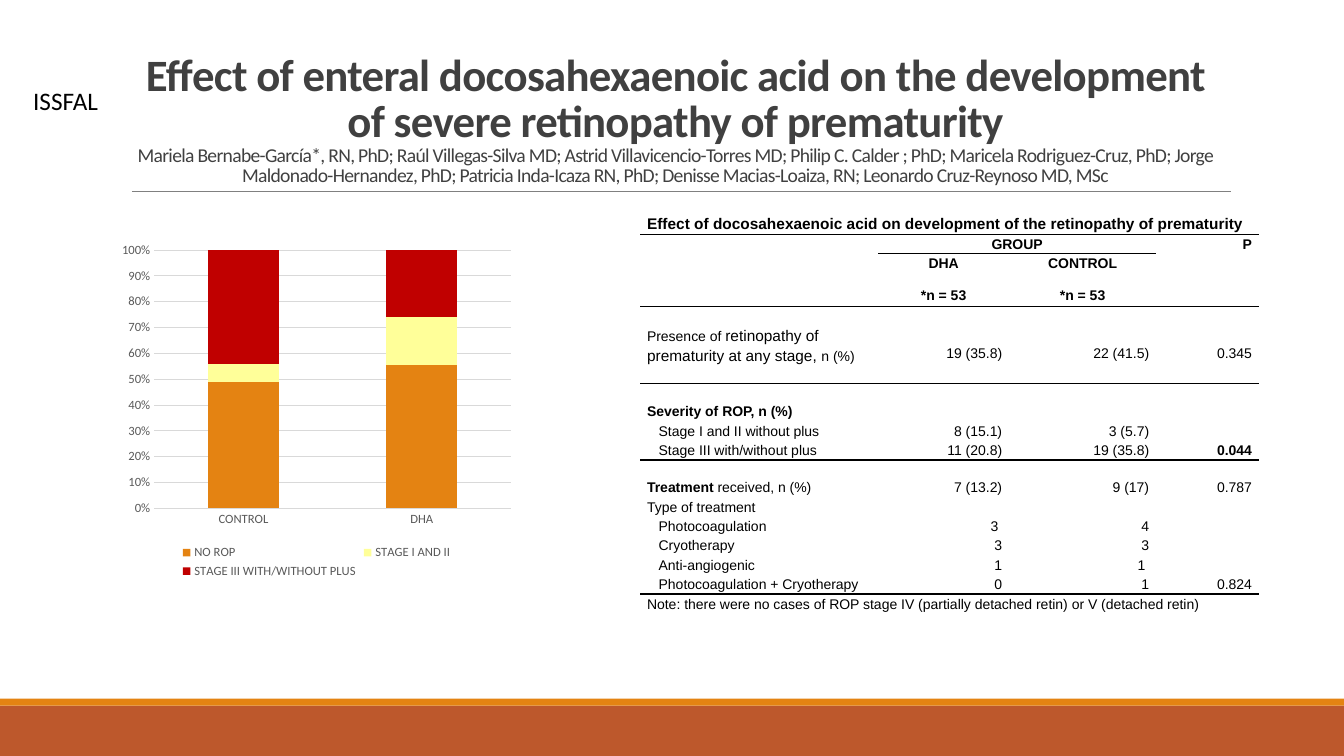
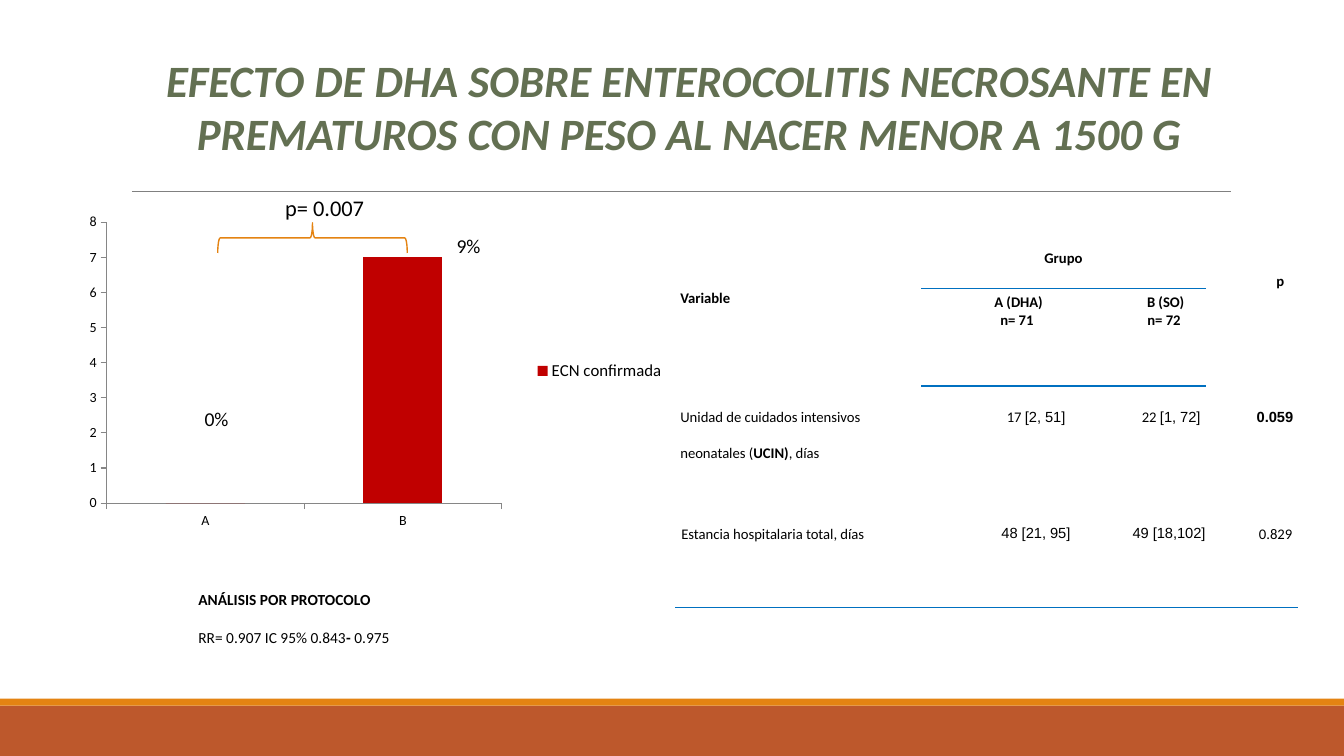
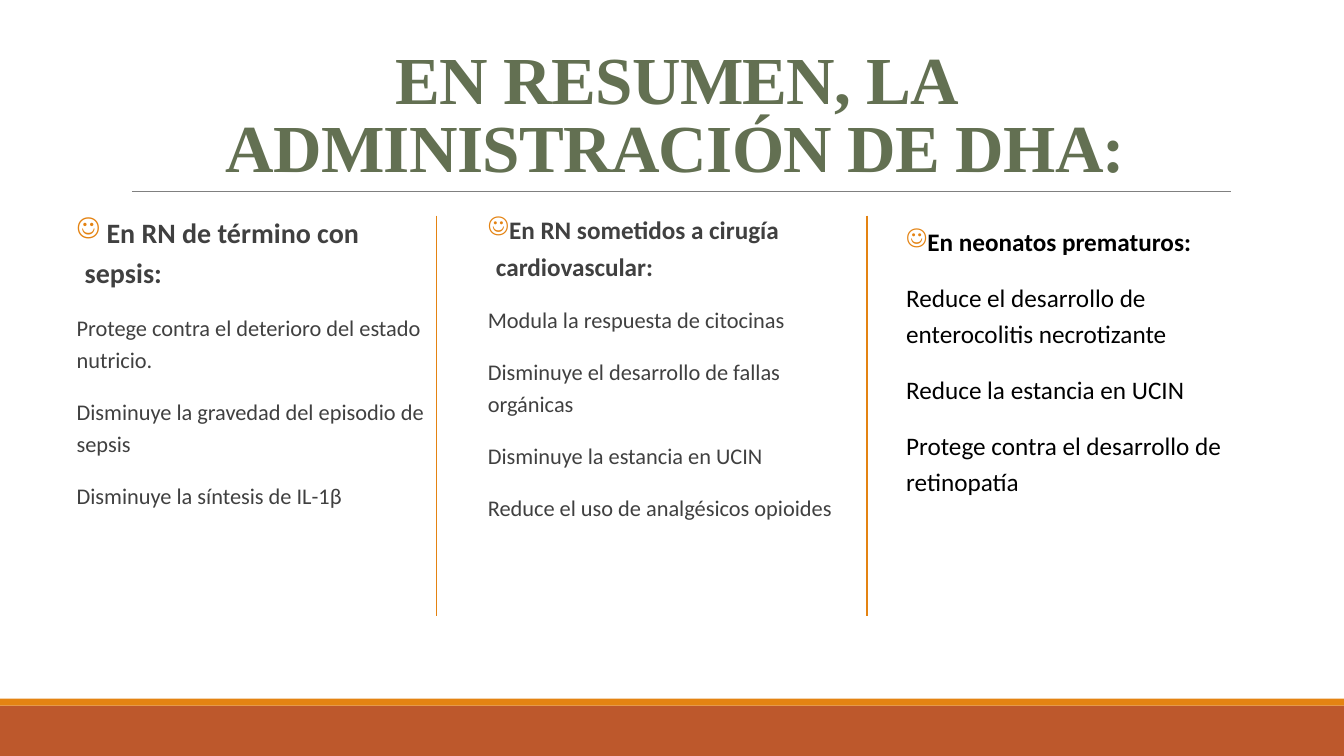
from lxml.etree import SubElement
from pptx import Presentation
from pptx.chart.data import CategoryChartData
from pptx.dml.color import RGBColor
from pptx.enum.chart import XL_CHART_TYPE, XL_LEGEND_POSITION, XL_TICK_MARK
from pptx.enum.shapes import MSO_CONNECTOR, MSO_SHAPE
from pptx.enum.text import MSO_ANCHOR, MSO_AUTO_SIZE, PP_ALIGN
from pptx.oxml import parse_xml
from pptx.oxml.ns import nsdecls, qn
from pptx.util import Pt

LEFT, CENTER, RIGHT = PP_ALIGN.LEFT, PP_ALIGN.CENTER, PP_ALIGN.RIGHT
BREAK = None
RUST, ORANGE, GREEN, RED = "BD582C", "E48312", "637052", "C00000"
BLACK, INK, GRAY, PALE, BLUE = "000000", "404040", "595959", "D9D9D9", "0070C0"
PLAIN_TABLE = "{2D5ABB26-0587-4C30-8999-92F81FD0307C}"
BOLD = {"bold": True}
ARIAL = {"font": "Arial"}

STUDY_TITLE = [
    "Effect of enteral docosahexaenoic acid on the development of severe retinopathy of prematurity",
    BREAK,
    ("Mariela Bernabe-García*, RN, PhD; Raúl Villegas-Silva MD; Astrid Villavicencio-Torres MD; "
     "Philip C. Calder ; PhD; Maricela Rodriguez-Cruz, PhD; Jorge Maldonado-Hernandez, PhD; "
     "Patricia Inda-Icaza RN, PhD; Denisse Macias-Loaiza, RN; Leonardo Cruz-Reynoso MD, MSc",
     {"size": 14, "bold": False}),
]
ROP_SERIES = [
    ("NO ROP", (49, 56), ORANGE),
    ("STAGE I AND II", (7, 19), "FFFF99"),
    ("STAGE III WITH/WITHOUT PLUS", (44, 26), RED),
]
ROP_WIDTHS = [170, 93.6, 105, 73.4]
ROP_ROWS = [
    (29.7, ["Effect of docosahexaenoic acid on development of the retinopathy of prematurity", "", "", ""]),
    (12.5, ["", "GROUP", "", "P"]),
    (36, ["", ("DHA", "*n = 53"), ("CONTROL", "*n = 53"), ""]),
    (13.2, [""] * 4),
    (29, [["Presence of ", ("retinopathy of prematurity at any stage, ", {"size": 11}), "n (%)"],
          "19 (35.8)", "22 (41.5)", "0.345"]),
    (11.4, [""] * 4),
    (13.2, [""] * 4),
    (12.8, [[("Severity of ROP, n (%)", BOLD)], "", "", ""]),
    (12.8, ["Stage I and II without plus", "8 (15.1)", "3 (5.7)", ""]),
    (12.8, ["Stage III with/without plus", "11 (20.8)", "19 (35.8)", [("0.044", BOLD)]]),
    (12.8, [""] * 4),
    (12.8, [[("Treatment", BOLD), " received, n (%)"], "7 (13.2)", "9 (17)", "0.787"]),
    (12.8, ["Type of treatment", "", "", ""]),
    (12.8, ["Photocoagulation", "3 ", "4", ""]),
    (12.8, ["Cryotherapy", "3", "3", ""]),
    (12.8, ["Anti-angiogenic", "1", "1 ", ""]),
    (12.8, ["Photocoagulation + Cryotherapy", "0", "1", "0.824"]),
    (12.8, ["Note: there were no cases of ROP stage IV (partially detached retin) or V (detached retin)",
            "", "", ""]),
]
ROP_MERGES = [(0, 0, 0, 3), (1, 1, 1, 2), (17, 0, 17, 3)]
ROP_RULES = {0: (1.5, range(4)), 1: (1, (1, 2)), 2: (1.5, range(4)), 5: (1, range(4)),
             9: (1, range(4)), 16: (1.5, range(4))}
INDENTED_ROWS = {8, 9, 13, 14, 15, 16}

NEC_TITLE = ["EFECTO DE DHA SOBRE ENTEROCOLITIS NECROSANTE EN",
             "PREMATUROS CON PESO AL NACER MENOR A 1500 G"]
NEC_SERIES = [("ECN confirmada", (0, 7), RED)]
NEC_LABELS = [
    ("p= 0.007", 16, (196.6, 135.4, 77.8, 26.6)),
    ("0%", 14, (139, 287.3, 39.6, 24.5)),
    ("9%", 14, (319, 163.4, 39.6, 24.5)),
]
NEC_RISK = ["RR= 0.907 IC 95% 0.843", ("- ", BOLD), "0.975"]
STAY_WIDTHS = [175.7, 106.6, 96.5, 66.2]
STAY_HEIGHTS = [40.3, 69.8, 99.4, 59]
STAY_MERGES = [(0, 0, 1, 0), (0, 1, 0, 2), (0, 3, 1, 3)]
STAY_CELLS = [
    (0, 0, [("Variable", BOLD)], LEFT, (3.6, 41, 3.6)),
    (0, 1, [("Grupo", BOLD)], CENTER, (3.6, 13, 3.6)),
    (0, 3, [("p", BOLD)], RIGHT, (4.3, 29.3, 10)),
    (1, 1, ([("A (DHA)", BOLD)], [("n= 71 ", BOLD)]), CENTER, (36, 3.6, 3.6)),
    (1, 2, ([("B (SO)", BOLD)], [("n= 72 ", BOLD)]), CENTER, (43, 3.6, 3.6)),
    (2, 0, ["Unidad de cuidados intensivos neonatales (", ("UCIN)", BOLD), ", días"], LEFT, (3.6, 3.6, 3.6)),
    (2, 1, ["17 ", ("[2, 51]", ARIAL)], RIGHT, (3.6, 16.4, 3.6)),
    (2, 2, ["22 ", ("[1, 72]", ARIAL)], RIGHT, (3.6, 16.4, 3.6)),
    (2, 3, [("0.059", ARIAL | BOLD)], RIGHT, (4.3, 16.4, 3.6)),
    (3, 0, "Estancia hospitalaria total, días", LEFT, (4.3, 0, 0)),
    (3, 1, [("48 [21, 95]", ARIAL)], RIGHT, (0, 0, 0)),
    (3, 2, [("49 [18,102]", ARIAL)], RIGHT, (0, 0, 0)),
    (3, 3, "0.829", RIGHT, (0, 0, 4.3)),
]
STAY_RULES = {0: (1, 2), 1: range(4), 3: range(4)}

SUMMARY_TITLE = "EN RESUMEN, LA ADMINISTRACIÓN DE DHA:"
SUMMARY = [
    ((54.7, 145.4, 257.8, 336), " En RN de término con sepsis:", 20, 16, INK,
     ["Protege contra el deterioro del estado nutricio.",
      "Disminuye la gravedad del episodio de sepsis",
      "Disminuye la síntesis de IL-1β"]),
    ((348.5, 145.4, 249, 336), "En RN sometidos a cirugía cardiovascular:", 18, 16, INK,
     ["Modula la respuesta de citocinas",
      "Disminuye el desarrollo de fallas orgánicas",
      "Disminuye la estancia en UCIN",
      "Reduce el uso de analgésicos opioides"]),
    ((647.3, 154, 257.8, 336), "En neonatos prematuros:", 18, 18, BLACK,
     ["Reduce el desarrollo de enterocolitis necrotizante",
      "Reduce la estancia en UCIN",
      "Protege contra el desarrollo de retinopatía"]),
]
DIVIDERS = [312, 619.2]


def rgb(value):
    return RGBColor.from_string(value)


def points(values):
    return [Pt(value) for value in values]


def set_font(font, size=None, name=None, color=None, bold=None, italic=None):
    if size:
        font.size = Pt(size)
    if name:
        font.name = name
    if color:
        font.color.rgb = rgb(color)
    if bold is not None:
        font.bold = bold
    if italic is not None:
        font.italic = italic


def write(frame, paragraphs, size, font="Calibri", color=BLACK, bold=False, italic=None,
          align=LEFT, leading=None, before=None, after=None):
    first = len(frame.paragraphs) == 1 and not frame.paragraphs[0].runs
    for content in paragraphs:
        paragraph = frame.paragraphs[0] if first else frame.add_paragraph()
        first = False
        paragraph.alignment = align
        if leading:
            paragraph.line_spacing = leading
        if before is not None:
            paragraph.space_before = Pt(before)
        if after is not None:
            paragraph.space_after = Pt(after)
        set_font(paragraph.font, size, font, color, bold, italic)
        for part in [content] if isinstance(content, str) else content:
            if part is BREAK:
                paragraph.add_line_break()
                continue
            text, changes = (part, {}) if isinstance(part, str) else part
            run = paragraph.add_run()
            run.text = text
            set_font(run.font, changes.get("size"), changes.get("font"), bold=changes.get("bold"))


def text_box(slide, place, wrap=True, side=7.2):
    frame = slide.shapes.add_textbox(*points(place)).text_frame
    frame.word_wrap = wrap
    frame.margin_left = frame.margin_right = Pt(side)
    return frame


def draw_line(slide, x1, y1, x2, y2, color, width):
    line = slide.shapes.add_connector(MSO_CONNECTOR.STRAIGHT, *points((x1, y1, x2, y2)))
    line.line.color.rgb = rgb(color)
    line.line.width = Pt(width)
    SubElement(line.element.spPr, qn("a:effectLst"))
    return line


def draw_band(slide, top, height, color):
    band = slide.shapes.add_shape(MSO_SHAPE.RECTANGLE, *points((0, top, 960, height)))
    band.shadow.inherit = False
    band.fill.solid()
    band.fill.fore_color.rgb = rgb(color)
    band.line.fill.background()
    return band


def furnish_master(master, slide):
    furniture = [draw_band(slide, 504, 36, RUST), draw_band(slide, 499, 5, ORANGE),
                 draw_line(slide, 94.3, 136.8, 879.1, 136.8, "808080", 0.5)]
    for number, part in enumerate(furniture, 100):
        part.element.xpath(".//p:cNvPr")[0].set("id", str(number))
        master.element.cSld.spTree.append(part.element)


def place_title(slide, paragraphs, size, place=(86.4, 22.3, 792, 114.5),
                anchor=MSO_ANCHOR.BOTTOM, tracking=-50, **style):
    title = slide.shapes.title
    title.left, title.top, title.width, title.height = points(place)
    frame = title.text_frame
    frame.word_wrap = True
    frame.auto_size = MSO_AUTO_SIZE.NONE
    frame.vertical_anchor = anchor
    write(frame, paragraphs, size, bold=True, align=CENTER, **style)
    for defaults in title.element.iter(qn("a:defRPr")):
        defaults.set("spc", str(tracking))


def add_grid(slide, left, top, widths, heights, merges):
    graphic = slide.shapes.add_table(len(heights), len(widths),
                                     *points((left, top, sum(widths), sum(heights))))
    table = graphic.table
    table.first_row = table.horz_banding = False
    next(graphic.element.iter(qn("a:tableStyleId"))).text = PLAIN_TABLE
    for column, width in zip(table.columns, widths):
        column.width = Pt(width)
    for row, height in zip(table.rows, heights):
        row.height = Pt(height)
    for cell in table.iter_cells():
        cell.fill.background()
        set_margins(cell, 5, 0, 5)
    for r1, c1, r2, c2 in merges:
        table.cell(r1, c1).merge(table.cell(r2, c2))
    return graphic


def set_margins(cell, left, top, right):
    cell.margin_left, cell.margin_top, cell.margin_right, cell.margin_bottom = points((left, top, right, 0))


def rule_below(graphic, row, columns, color, width):
    cells = list(graphic.element.iter(qn("a:tr")))[row].findall(qn("a:tc"))
    for column in columns:
        cells[column].find(qn("a:tcPr")).insert(0, parse_xml(
            f'<a:lnB {nsdecls("a")} w="{Pt(width)}"><a:solidFill><a:srgbClr val="{color}"/></a:solidFill></a:lnB>'))


def shrink_empty(graphic):
    for paragraph in graphic.element.iter(qn("a:p")):
        if paragraph.find(qn("a:r")) is None:
            for old in paragraph.findall(qn("a:endParaRPr")):
                paragraph.remove(old)
            SubElement(paragraph, qn("a:endParaRPr"), sz="600")


def as_paragraphs(content):
    return content if isinstance(content, tuple) else (content,)


def add_columns(slide, kind, categories, series, place, legend_spot, legend_size, legend_color):
    data = CategoryChartData()
    data.categories = categories
    for name, values, _ in series:
        data.add_series(name, values)
    chart = slide.shapes.add_chart(kind, *points(place), data).chart
    set_font(chart.font, 10, "Calibri", BLACK)
    chart.has_title = False
    chart.has_legend = True
    chart.legend.position = legend_spot
    chart.legend.include_in_layout = False
    set_font(chart.legend.font, legend_size, "Calibri", legend_color)
    plot = chart.plots[0]
    plot.gap_width = 150
    plot.vary_by_categories = False
    for drawn, (_, _, color) in zip(plot.series, series):
        drawn.format.fill.solid()
        drawn.format.fill.fore_color.rgb = rgb(color)
        drawn.invert_if_negative = False
    return chart


def style_axis(axis, tick, size, color, line):
    axis.major_tick_mark = tick
    axis.minor_tick_mark = XL_TICK_MARK.NONE
    set_font(axis.tick_labels.font, size, "Calibri", color)
    if line:
        axis.format.line.color.rgb = rgb(line)
        axis.format.line.width = Pt(0.75)
    else:
        axis.format.line.fill.background()


def build_retinopathy(slide):
    place_title(slide, [STUDY_TITLE], 32, color=INK, leading=0.85)
    write(text_box(slide, (16.6, 57.6, 61.2, 28.8), wrap=False), ["ISSFAL"], 18)
    chart = add_columns(slide, XL_CHART_TYPE.COLUMN_STACKED_100, ["CONTROL", "DHA"], ROP_SERIES,
                        (81.4, 168.5, 289.4, 247.7), XL_LEGEND_POSITION.BOTTOM, 9, GRAY)
    chart.plots[0].overlap = 100
    style_axis(chart.category_axis, XL_TICK_MARK.NONE, 9, GRAY, PALE)
    percent = chart.value_axis
    style_axis(percent, XL_TICK_MARK.NONE, 9, GRAY, None)
    percent.tick_labels.number_format = "0%"
    percent.tick_labels.number_format_is_linked = False
    percent.major_gridlines.format.line.color.rgb = rgb(PALE)
    percent.major_gridlines.format.line.width = Pt(0.75)

    graphic = add_grid(slide, 457.2, 136.8, ROP_WIDTHS, [height for height, _ in ROP_ROWS], ROP_MERGES)
    for r, (_, contents) in enumerate(ROP_ROWS):
        for c, content in enumerate(contents):
            if not content:
                continue
            cell = graphic.table.cell(r, c)
            top = 15.5 if r == 0 else 13.2 if r == 4 and c else 0
            set_margins(cell, 13.3 if r in INDENTED_ROWS and c == 0 else 5, top, 5)
            header = r < 3
            align = LEFT if c == 0 else CENTER if header and c < 3 else RIGHT
            write(cell.text_frame, as_paragraphs(content), 11 if r == 0 else 10, "Arial", bold=header,
                  align=align, leading=1.15, after=10 if isinstance(content, tuple) else 0)
    for row, (width, columns) in ROP_RULES.items():
        rule_below(graphic, row, columns, BLACK, width)
    shrink_empty(graphic)


def build_enterocolitis(slide):
    place_title(slide, NEC_TITLE, 32, (84.2, 33.8, 816.5, 85), MSO_ANCHOR.TOP, 0,
                color=GREEN, italic=True, leading=1, before=0)
    graphic = add_grid(slide, 482.4, 165.6, STAY_WIDTHS, STAY_HEIGHTS, STAY_MERGES)
    for r, c, content, align, margins in STAY_CELLS:
        cell = graphic.table.cell(r, c)
        set_margins(cell, *margins)
        write(cell.text_frame, as_paragraphs(content), 10.5, align=align, leading=2 if (r, c) == (2, 0) else 1)
    for row, columns in STAY_RULES.items():
        rule_below(graphic, row, columns, BLUE, 1)
    shrink_empty(graphic)

    chart = add_columns(slide, XL_CHART_TYPE.COLUMN_CLUSTERED, ["A", "B"], NEC_SERIES,
                        (54.7, 146.9, 427.7, 236.2), XL_LEGEND_POSITION.RIGHT, 12, BLACK)
    for axis in (chart.category_axis, chart.value_axis):
        style_axis(axis, XL_TICK_MARK.OUTSIDE, 10, BLACK, "868686")
    chart.value_axis.has_major_gridlines = False
    chart.value_axis.minimum_scale, chart.value_axis.maximum_scale = 0, 8
    chart.value_axis.major_unit = 1
    area = next(chart.element.iter(qn("c:plotArea")))
    for old in area.findall(qn("c:layout")):
        area.remove(old)
    layout = SubElement(area, qn("c:layout"))
    area.insert(0, layout)
    manual = SubElement(layout, qn("c:manualLayout"))
    for tag, value in (("layoutTarget", "inner"), ("xMode", "edge"), ("yMode", "edge"),
                       ("x", "0.05"), ("y", "0.05"), ("w", "0.66"), ("h", "0.85")):
        SubElement(manual, qn(f"c:{tag}"), val=value)

    brace = slide.shapes.add_shape(MSO_SHAPE.RIGHT_BRACE, *points((212.4, 102.2, 21.6, 135.4)))
    brace.rotation = 270
    brace.shadow.inherit = False
    brace.fill.background()
    brace.line.color.rgb = rgb(ORANGE)
    brace.line.width = Pt(1)
    for label, size, place in NEC_LABELS:
        write(text_box(slide, place, wrap=len(label) < 3), [label], size)
    protocol = text_box(slide, (134.6, 418.3, 164.2, 47.5))
    write(protocol, ["ANÁLISIS POR PROTOCOLO"], 11, bold=True)
    write(protocol, [NEC_RISK], 11, before=13.4)


def build_summary(slide):
    place_title(slide, [SUMMARY_TITLE], 48, font="Times New Roman", color=GREEN, leading=0.85)
    for place, heading, heading_size, size, color, effects in SUMMARY:
        frame = text_box(slide, place, side=0)
        spacing = {"color": color, "leading": 1.2, "before": 12, "after": 2}
        write(frame, [heading], heading_size, bold=True, **spacing)
        write(frame, effects, size, **spacing)
        properties = next(frame.paragraphs[0].font and slide.shapes[-1].element.iter(qn("a:pPr")))
        properties.set("marL", str(Pt(5.8)))
        properties.set("indent", str(Pt(-27.4)))
        defaults = properties.find(qn("a:defRPr"))
        defaults.addprevious(parse_xml(
            f'<a:buClr {nsdecls("a")}><a:srgbClr val="{ORANGE}"/></a:buClr>'))
        defaults.addprevious(parse_xml(f'<a:buChar {nsdecls("a")} char="☺"/>'))
    for x in DIVIDERS:
        draw_line(slide, x, 154, x, 440, ORANGE, 1)


def main():
    deck = Presentation()
    deck.slide_width, deck.slide_height = Pt(960), Pt(540)
    for number, build in enumerate((build_retinopathy, build_enterocolitis, build_summary)):
        slide = deck.slides.add_slide(deck.slide_layouts[5])
        if number == 0:
            furnish_master(deck.slide_master, slide)
        build(slide)
    deck.save("out.pptx")


if __name__ == "__main__":
    main()
